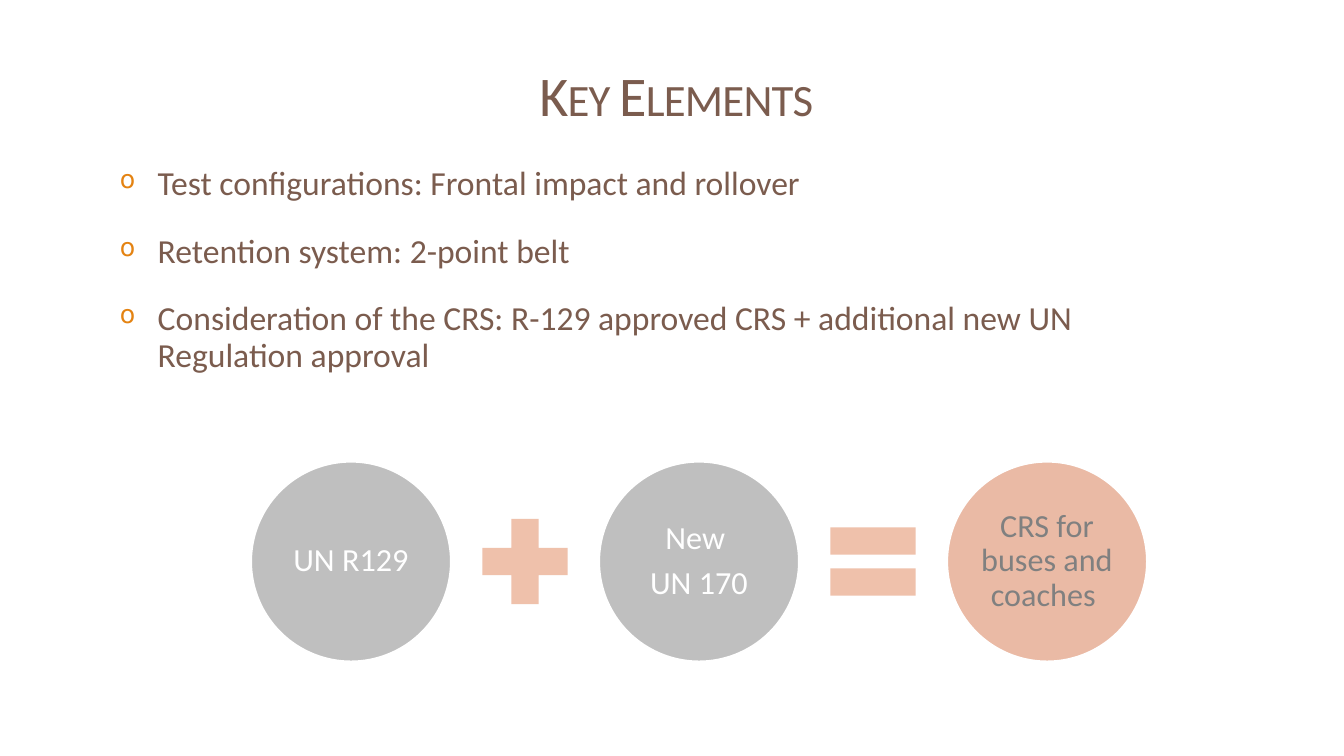
from dataclasses import dataclass

from lxml.etree import SubElement
from pptx import Presentation
from pptx.dml.color import RGBColor
from pptx.enum.shapes import MSO_SHAPE
from pptx.enum.text import MSO_ANCHOR, PP_ALIGN
from pptx.oxml.ns import qn
from pptx.util import Pt


@dataclass
class Theme:
    font: str = "Calibri"
    brown: str = "7B5C4E"
    orange: str = "E48312"
    gray: str = "BFBFBF"
    dark: str = "808080"
    peach: str = "EABAA5"
    sign: str = "EFC1AB"
    white: str = "FFFFFF"
    title: int = 40
    body: int = 24
    label: int = 23


theme = Theme()


def style(frame, size, color, space, align, gap=0):
    """Format every paragraph; the gap goes between paragraphs only."""
    frame.word_wrap = True
    for para in frame.paragraphs:
        para.alignment = align
        para.line_spacing = space
        para.space_before = Pt(0)
        para.space_after = Pt(gap)
        for run in para.runs:
            run.font.name = theme.font
            run.font.size = Pt(size)
            run.font.color.rgb = RGBColor.from_string(color)
    frame.paragraphs[-1].space_after = Pt(0)


def draw(kind, left, top, size, fill):
    """Add a square-framed shape with a plain fill and no outline."""
    shape = slide.shapes.add_shape(kind, Pt(left), Pt(top), Pt(size), Pt(size))
    shape.shadow.inherit = False
    shape.fill.solid()
    shape.fill.fore_color.rgb = RGBColor.from_string(fill)
    shape.line.fill.background()
    return shape


deck = Presentation()
deck.slide_width, deck.slide_height = Pt(960), Pt(540)
slide = deck.slides.add_slide(deck.slide_layouts[6])

# Title
box = slide.shapes.add_textbox(Pt(120), Pt(31.7), Pt(720), Pt(79.2))
frame = box.text_frame
frame.text = "Key Elements"
frame.vertical_anchor = MSO_ANCHOR.MIDDLE
style(frame, theme.title, theme.brown, 0.85, PP_ALIGN.CENTER)
props = frame.paragraphs[0].runs[0].font._element
props.set("cap", "small")
props.set("spc", "-50")

# Bullet list
points = [
    "Test configurations: Frontal impact and rollover",
    "Retention system: 2-point belt",
    "Consideration of the CRS: R-129 approved CRS + additional new UN Regulation approval",
]
box = slide.shapes.add_textbox(Pt(85.7), Pt(119), Pt(789), Pt(160))
frame = box.text_frame
frame.text = "\n".join(points)
frame.margin_left = frame.margin_right = frame.margin_top = Pt(0)
style(frame, theme.body, theme.brown, 0.9, PP_ALIGN.LEFT, 22.4)
for para in frame.paragraphs:
    props = para._p.get_or_add_pPr()
    props.set("marL", str(Pt(27)))
    props.set("indent", str(Pt(-27)))
    tint = SubElement(props, qn("a:buClr"))
    SubElement(tint, qn("a:srgbClr"), val=theme.orange)
    SubElement(props, qn("a:buSzPct"), val="75000")
    SubElement(props, qn("a:buChar"), char="o")

# Equation: circles at an equal pitch, each but the last followed by a sign
left, top, size, pitch = 179.4, 329.8, 142.6, 248.6
mark = 82.8
terms = [
    ("UN R129", theme.gray, theme.white, MSO_SHAPE.MATH_PLUS),
    ("New \nUN 170", theme.gray, theme.white, MSO_SHAPE.MATH_EQUAL),
    ("CRS for buses and coaches ", theme.peach, theme.dark, None),
]
for step, (text, fill, color, sign) in enumerate(terms):
    x = left + step * pitch
    disc = draw(MSO_SHAPE.OVAL, x, top, size, fill)
    disc.line.color.rgb = RGBColor.from_string(theme.white)
    disc.line.width = Pt(1.25)
    frame = disc.text_frame
    frame.text = text
    frame.vertical_anchor = MSO_ANCHOR.MIDDLE
    frame.margin_left = frame.margin_right = Pt(2.2)
    frame.margin_top = frame.margin_bottom = Pt(2.2)
    style(frame, theme.label, color, 0.9, PP_ALIGN.CENTER, 8)
    if sign:
        draw(sign, x + (size + pitch - mark) / 2, top + (size - mark) / 2, mark, theme.sign)

deck.save("out.pptx")
